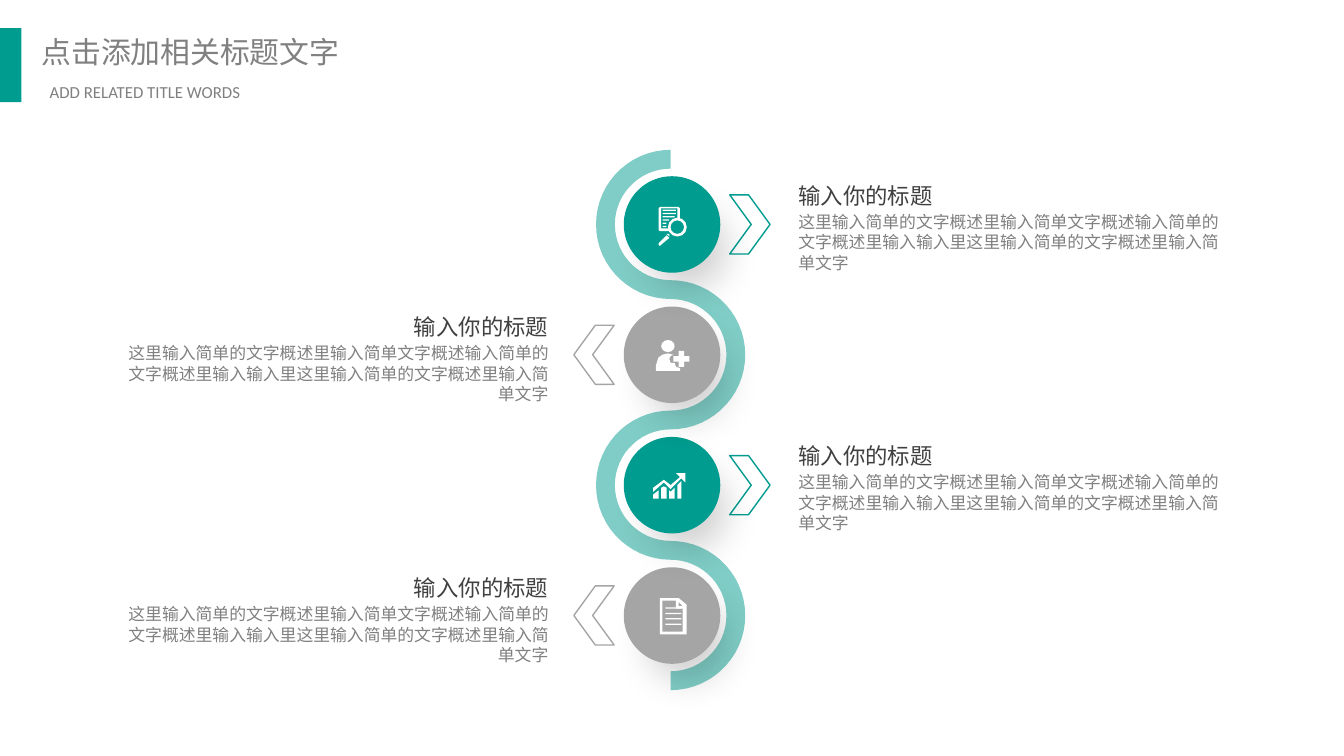
from math import cos, pi, sin

from lxml.etree import SubElement
from pptx import Presentation
from pptx.dml.color import RGBColor
from pptx.enum.shapes import MSO_SHAPE
from pptx.enum.text import MSO_ANCHOR, MSO_AUTO_SIZE, PP_ALIGN
from pptx.oxml.ns import qn
from pptx.util import Inches, Pt

TEAL, GREY, WHITE = "009C8F", "A5A5A5", "FFFFFF"
CJK = "Noto Sans CJK SC"
HEADING = "输入你的标题"
BODY = "这里输入简单的文字概述里输入简单文字概述输入简单的文字概述里输入输入里这里输入简单的文字概述里输入简单文字"

deck = Presentation()
deck.slide_width = Inches(10)
deck.slide_height = deck.slide_width * 9 // 16
page = deck.slides.add_slide(deck.slide_layouts[5])
shapes = page.shapes


def paint(shape, fill=None, line=None, width=0.75):
    """Set fill and line from hex strings; None means no fill or no line."""
    shape.shadow.inherit = False
    for part, colour in ((shape.fill, fill), (shape.line.fill, line)):
        if colour:
            part.solid()
            part.fore_color.rgb = RGBColor.from_string(colour)
        else:
            part.background()
    if line:
        shape.line.width = Pt(width)
    return shape


def add_outline(*contours):
    """Add one freeform made of closed contours, given as points in inches."""
    builder = None
    for contour in contours:
        points = [(Inches(x), Inches(y)) for x, y in contour]
        if builder is None:
            builder = shapes.build_freeform(*points[0], scale=1.0)
        else:
            builder.move_to(*points[0])
        builder.add_line_segments(points[1:], close=True)
    return builder.convert_to_shape()


# Header
styled = []  # paragraph, size, font, colour
bar = shapes.add_shape(MSO_SHAPE.RECTANGLE, 0, Inches(0.21), Inches(0.16), Inches(0.55))
paint(bar, TEAL)

title = shapes.title
title.left, title.top = Inches(0.23), Inches(0.21)
title.width, title.height = Inches(2.4), Inches(0.35)
title.text_frame.text = "点击添加相关标题文字"
subtitle = shapes.add_textbox(Inches(0.29), Inches(0.57), Inches(2.23), Inches(0.23))
subtitle.text_frame.text = "ADD RELATED TITLE WORDS"
for box, size, font, align in (
    (title, 16, CJK, PP_ALIGN.LEFT),
    (subtitle, 9, "Calibri", PP_ALIGN.JUSTIFY),
):
    frame = box.text_frame
    frame.margin_left = frame.margin_right = Inches(0.08)
    frame.margin_top = frame.margin_bottom = Inches(0.04)
    frame.auto_size = MSO_AUTO_SIZE.NONE
    frame.vertical_anchor = MSO_ANCHOR.MIDDLE
    frame.word_wrap = box is subtitle
    frame.paragraphs[0].alignment = align
    styled.append((frame.paragraphs[0], size, font, "808080"))

# Winding ribbon: half rings that swing left and right in turn
STEP, OUTER, INNER = 0.97, 0.555, 0.415
centres = [1.67 + STEP * row for row in range(4)]
sides = [1, -1, 1, -1]  # where the text stands: 1 right, -1 left
left_edge, right_edge = [], []
for centre, side in zip(centres, sides):
    radii = (OUTER, INNER) if side == 1 else (INNER, OUTER)
    for edge, radius in zip((left_edge, right_edge), radii):
        for step in range(31):
            angle = pi * step / 30
            edge.append((4.99 - side * radius * sin(angle), centre - radius * cos(angle)))
ribbon = paint(add_outline(left_edge + right_edge[::-1]), TEAL)
ribbon_colour = ribbon._element.xpath("./p:spPr/a:solidFill/a:srgbClr")[0]
SubElement(ribbon_colour, qn("a:alpha"), val="50000")

# Arrow, text and disc of each row
for centre, side in reversed(list(zip(centres, sides))):
    colour = TEAL if side == 1 else GREY
    chevron = [(0.43, -0.22), (0.59, 0), (0.43, 0.22), (0.57, 0.22), (0.73, 0), (0.57, -0.22)]
    paint(add_outline([(5 + side * x, centre + y) for x, y in chevron]), line=colour)

    left, rise = (5.94, 0.32) if side == 1 else (0.85, 0.31)
    box = shapes.add_textbox(Inches(left), Inches(centre - rise), Inches(3.23), Inches(0.69))
    frame = box.text_frame
    frame.word_wrap = True
    frame.margin_left = frame.margin_right = frame.margin_top = frame.margin_bottom = 0
    frame.text = HEADING + "\n" + BODY
    heading, body = frame.paragraphs
    heading.line_spacing, body.line_spacing = Pt(14.6), Pt(11)
    body.space_before = Pt(1.2)
    for para in (heading, body):
        para.alignment = PP_ALIGN.LEFT if side == 1 else PP_ALIGN.RIGHT
    styled += [(heading, 12, CJK, "404040"), (body, 9, CJK, "808080")]

    for diameter in (0.55, 0.69):
        disc = shapes.add_shape(
            MSO_SHAPE.OVAL, Inches(5 - diameter / 2), Inches(centre - diameter / 2),
            Inches(diameter), Inches(diameter))
        paint(disc, colour, colour, 2)
        if diameter == 0.55:
            effects = disc._element.spPr.find(qn("a:effectLst"))
            shadow = SubElement(
                effects, qn("a:outerShdw"), blurRad=str(Pt(20)), dist=str(Pt(15)),
                dir=str(59 * 60000), algn="ctr", rotWithShape="0")
            shade = SubElement(shadow, qn("a:srgbClr"), val="0D0D0D")
            SubElement(shade, qn("a:alpha"), val="20000")

# Icons drawn as outlines
search_page = [
    (4.98, 1.7), (4.92, 1.7), (4.92, 1.55), (5.04, 1.55), (5.04, 1.63), (5.06, 1.63),
    (5.06, 1.55), (5.05, 1.54), (4.91, 1.54), (4.9, 1.55), (4.9, 1.71), (4.91, 1.72), (4.98, 1.72)]
search_handle = [(4.96, 1.75), (4.98, 1.77), (4.92, 1.82), (4.91, 1.83), (4.9, 1.82), (4.9, 1.81)]
handle_tip = [(4.96, 1.74), (4.98, 1.74), (4.98, 1.76)]
person_body = [
    (4.88, 2.76), (4.88, 2.72), (4.9, 2.66), (4.93, 2.64), (4.97, 2.63), (5.01, 2.64),
    (4.99, 2.65), (4.98, 2.67), (4.99, 2.7), (5.02, 2.7), (5.03, 2.73), (5.06, 2.74), (5.06, 2.76)]
growth_bars = [
    [(4.86, 3.71), (4.9, 3.71), (4.9, 3.65), (4.86, 3.68)],
    [(4.92, 3.63), (4.92, 3.71), (4.96, 3.71), (4.96, 3.63), (4.94, 3.62)],
    [(4.98, 3.65), (4.98, 3.71), (5.02, 3.71), (5.02, 3.63), (4.99, 3.66)],
    [(5.04, 3.61), (5.04, 3.71), (5.07, 3.71), (5.07, 3.58)]]
growth_arrow = [
    (5.1, 3.52), (5.03, 3.52), (5.06, 3.55), (4.99, 3.61), (4.94, 3.57), (4.86, 3.63),
    (4.86, 3.66), (4.94, 3.59), (4.99, 3.64), (5.07, 3.56), (5.1, 3.59)]
document = [
    [(5.11, 4.5), (5.05, 4.45), (4.91, 4.45), (4.91, 4.72), (5.11, 4.72)],
    [(5.08, 4.51), (5.05, 4.51), (5.05, 4.48)],
    [(5.08, 4.7), (4.93, 4.7), (4.93, 4.47), (5.03, 4.47), (5.03, 4.53), (5.08, 4.53)]]
for contours in (
    [search_page], [search_handle, handle_tip], [person_body],
    growth_bars, [growth_arrow], document,
):
    paint(add_outline(*contours), WHITE)

# Icons drawn as preset shapes: kind, left, top, width, height, adjustment
parts = [
    (MSO_SHAPE.DONUT, 4.97, 1.62, 0.14, 0.14, 0.14),
    (MSO_SHAPE.OVAL, 4.92, 2.53, 0.1, 0.09, None),
    (MSO_SHAPE.CROSS, 5.01, 2.61, 0.12, 0.12, 0.33)]
for row, width in enumerate((0.1, 0.1, 0.09, 0.05, 0.03, 0.03)):
    parts.append((MSO_SHAPE.RECTANGLE, 4.93, 1.56 + 0.024 * row, width, 0.01, None))
for row in range(4):
    parts.append((MSO_SHAPE.RECTANGLE, 4.95, 4.52 + 0.04 * row, 0.12, 0.01, None))
for kind, left, top, width, height, adjustment in parts:
    part = paint(shapes.add_shape(kind, Inches(left), Inches(top), Inches(width), Inches(height)), WHITE)
    if adjustment:
        part.adjustments[0] = adjustment

# Type
for para, size, font, colour in styled:
    para.font.size, para.font.name = Pt(size), font
    para.font.color.rgb = RGBColor.from_string(colour)
    latin = para._p.pPr.find(qn("a:defRPr")).find(qn("a:latin"))
    latin.addnext(latin.makeelement(qn("a:ea"), {"typeface": font}))

deck.save("out.pptx")
